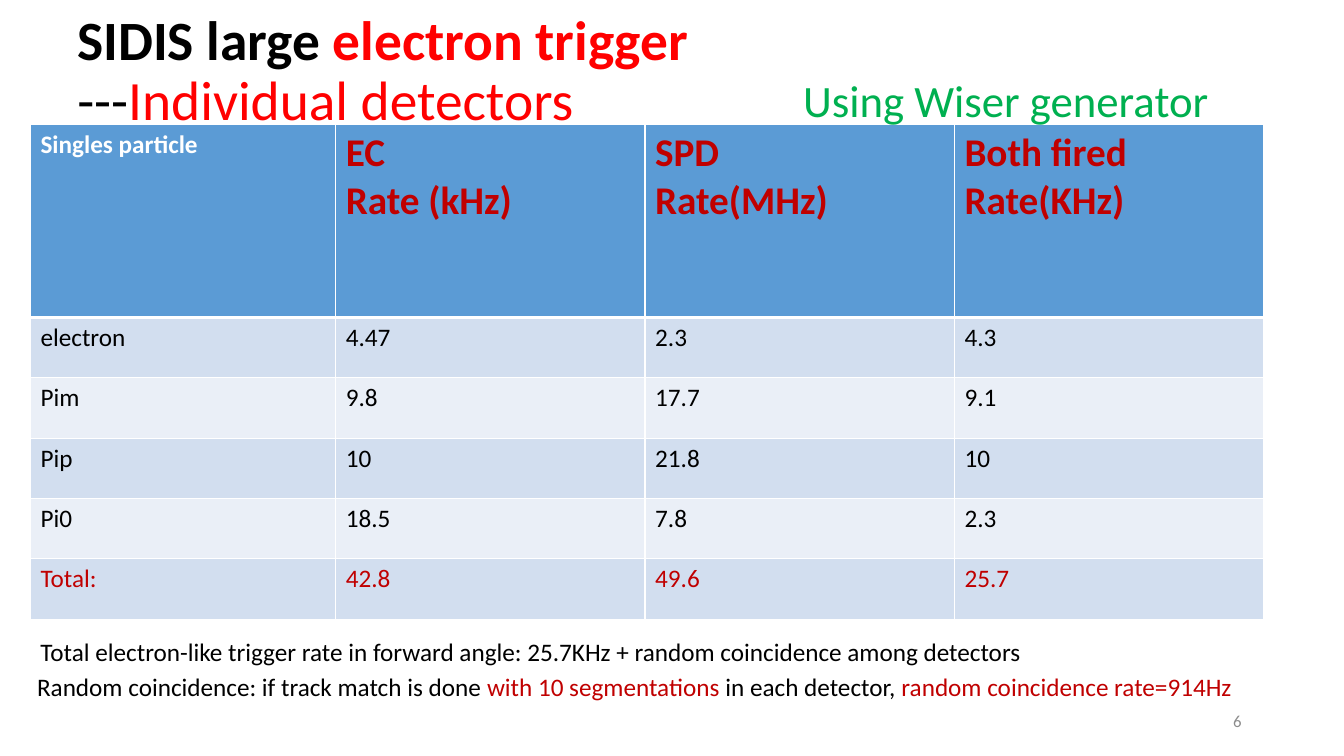
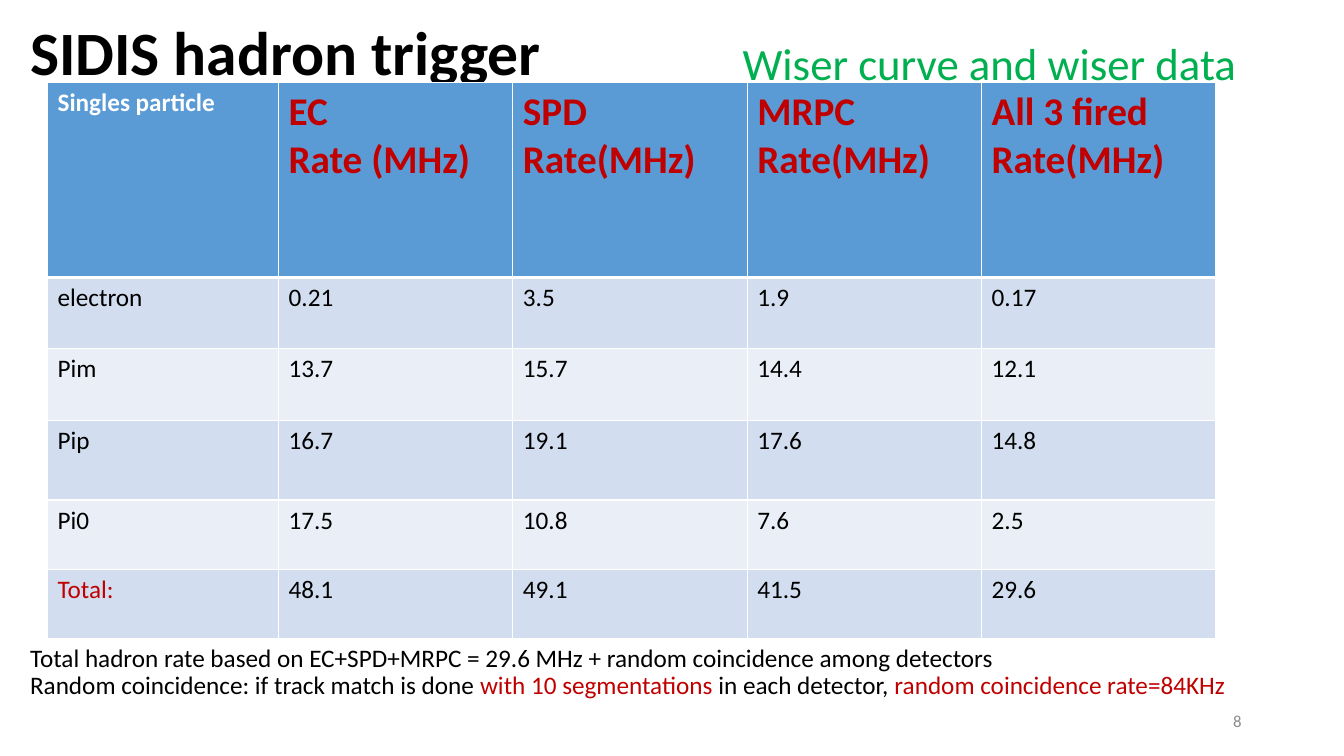
from dataclasses import dataclass

from lxml import etree
from pptx import Presentation
from pptx.dml.color import RGBColor
from pptx.enum import text as t
from pptx.oxml.ns import qn
from pptx.util import Pt

FONT = "Calibri"
HEX = {
    "black": "000000", "white": "FFFFFF", "red": "FF0000", "dark": "C00000",
    "green": "00B050", "gray": "8C8C8C",
    "head": "5B9BD5", "odd": "D2DEEF", "even": "EAEFF7",
}
BODY, HEAD, TAG, FOOT = 18, 28, 32, 12


@dataclass(frozen=True)
class Piece:
    """A run of text; a final newline breaks the line after it."""
    text: str
    color: str = "black"
    bold: bool = False


@dataclass(frozen=True)
class Box:
    left: float
    top: float
    width: float
    height: float


@dataclass(frozen=True)
class Label:
    box: Box
    pieces: tuple[Piece, ...]
    size: float = BODY
    wrap: bool = False


@dataclass(frozen=True)
class Grid:
    left: float
    top: float
    first: float
    other: float
    heights: tuple[float, ...]
    heads: tuple[str, ...]
    rows: tuple[tuple[str, ...], ...]
    total: str


@dataclass(frozen=True)
class Page:
    number: str
    title: Label
    grid: Grid
    labels: tuple[Label, ...]


def color(name: str) -> RGBColor:
    return RGBColor.from_string(HEX[name])


def style(run, size: float, tone: str, bold: bool = False) -> None:
    font = run.font
    font.name, font.size, font.bold = FONT, Pt(size), bold
    font.color.rgb = color(tone)


def write(para, pieces: tuple[Piece, ...], size: float) -> None:
    for piece in pieces:
        run = para.add_run()
        run.text = piece.text.rstrip("\n")
        style(run, size, piece.color, piece.bold)
        if piece.text.endswith("\n"):
            para.add_line_break()
            etree.SubElement(para._p[-1], qn("a:rPr"), sz=str(round(size * 100)))


def place(shape, box: Box) -> None:
    shape.left, shape.top = Pt(box.left), Pt(box.top)
    shape.width, shape.height = Pt(box.width), Pt(box.height)


def add_title(slide, label: Label) -> None:
    shape = slide.shapes.title
    place(shape, label.box)
    frame = shape.text_frame
    frame.auto_size = t.MSO_AUTO_SIZE.NONE
    frame.vertical_anchor = t.MSO_ANCHOR.MIDDLE
    para = frame.paragraphs[0]
    para.alignment = t.PP_ALIGN.LEFT
    para.line_spacing = 0.9
    write(para, label.pieces, label.size)


def add_label(slide, label: Label):
    box = label.box
    shape = slide.shapes.add_textbox(
        Pt(box.left), Pt(box.top), Pt(box.width), Pt(box.height))
    frame = shape.text_frame
    frame.word_wrap = label.wrap
    frame.auto_size = t.MSO_AUTO_SIZE.SHAPE_TO_FIT_TEXT
    write(frame.paragraphs[0], label.pieces, label.size)
    return frame


def add_number(slide, number: str) -> None:
    frame = add_label(slide, Label(
        Box(678, 500.5, 216, 28.8), (Piece(number, "gray"),), FOOT, True))
    frame.auto_size = t.MSO_AUTO_SIZE.NONE
    frame.vertical_anchor = t.MSO_ANCHOR.MIDDLE
    frame.paragraphs[0].alignment = t.PP_ALIGN.RIGHT


def edge(cell, top: float, bottom: float) -> None:
    """Give the cell white borders; the sides are one point wide."""
    props = cell._tc.get_or_add_tcPr()
    for tag, width in (("lnL", 1), ("lnR", 1), ("lnT", top), ("lnB", bottom)):
        line = etree.SubElement(props, qn(f"a:{tag}"), w=str(Pt(width)))
        fill = etree.SubElement(line, qn("a:solidFill"))
        etree.SubElement(fill, qn("a:srgbClr"), val=HEX["white"])


def add_grid(slide, grid: Grid) -> None:
    rows = (("Singles particle", *grid.heads), *grid.rows)
    widths = [grid.first] + [grid.other] * len(grid.heads)
    table = slide.shapes.add_table(
        len(rows), len(widths), Pt(grid.left), Pt(grid.top),
        Pt(sum(widths)), Pt(sum(grid.heights))).table
    for col, width in zip(table.columns, widths):
        col.width = Pt(width)
    for row, height in zip(table.rows, grid.heights):
        row.height = Pt(height)
    last = len(rows) - 1
    for r, row in enumerate(rows):
        for c, text in enumerate(row):
            cell = table.cell(r, c)
            edge(cell, 3 if r == 1 else 1, 3 if r == 0 else 1)
            cell.fill.solid()
            band = "head" if r == 0 else "odd" if r % 2 else "even"
            cell.fill.fore_color.rgb = color(band)
            size, tone = BODY, "black"
            if r == 0:
                size, tone = (HEAD, "dark") if c else (BODY, "white")
            elif r == last:
                tone = grid.total if c else "dark"
            cell.text_frame.text = text
            for para in cell.text_frame.paragraphs:
                style(para.runs[0], size, tone, r == 0)


def chance(rate: str) -> tuple[Piece, ...]:
    return (
        Piece("Random coincidence: if track match is done "),
        Piece("with 10 segmentations ", "dark"),
        Piece("in each detector, "),
        Piece(f"random coincidence rate={rate}", "dark"),
    )


PAGES = (
    Page(
        "6",
        Label(Box(48, 10, 828, 83.5), (
            Piece("SIDIS large ", bold=True),
            Piece("electron trigger\n", "red", True),
            Piece("---"),
            Piece("Individual detectors", "red"),
        ), 39.6),
        Grid(
            21.8, 88.8, 218, 221, (138, *[43.1] * 5),
            ("EC\nRate (kHz)", "SPD\nRate(MHz)", "Both fired\nRate(KHz)"),
            (
                ("electron", "4.47", "2.3", "4.3"),
                ("Pim", "9.8", "17.7", "9.1"),
                ("Pip", "10", "21.8", "10"),
                ("Pi0", "18.5", "7.8", "2.3"),
                ("Total:", "42.8", "49.6", "25.7"),
            ),
            "dark",
        ),
        (
            Label(Box(566.6, 48.2, 348, 46),
                  (Piece("Using Wiser generator", "green"),), TAG, True),
            Label(Box(21.8, 451, 723.6, 29), (Piece(
                "Total electron-like trigger rate in forward angle: "
                "25.7KHz + random coincidence among detectors"),)),
            Label(Box(19.4, 476, 882.7, 29), chance("914Hz")),
        ),
    ),
    Page(
        "8",
        Label(Box(14.4, 2, 828, 75),
              (Piece("SIDIS hadron trigger", bold=True),), 44),
        Grid(
            34, 59.2, 165, 167.4, (139, 51, 51, 57, 49.5, 49.5),
            ("EC\nRate (MHz)", "SPD\nRate(MHz)", "MRPC\nRate(MHz)",
             "All 3 fired\nRate(MHz)"),
            (
                ("electron", "0.21", "3.5", "1.9", "0.17"),
                ("Pim", "13.7", "15.7", "14.4", "12.1"),
                ("Pip", "16.7", "19.1", "17.6", "14.8"),
                ("Pi0", "17.5", "10.8", "7.6", "2.5"),
                ("Total:", "48.1", "49.1", "41.5", "29.6"),
            ),
            "black",
        ),
        (
            Label(Box(14.4, 455, 715, 29), (Piece(
                "Total hadron rate based on EC+SPD+MRPC = 29.6 MHz "
                "+ random coincidence among detectors"),)),
            Label(Box(523.4, 21.6, 370.8, 46),
                  (Piece("Wiser curve and wiser data", "green"),), TAG),
            Label(Box(14.4, 474.5, 882.7, 29), chance("84KHz")),
        ),
    ),
)


def main() -> None:
    deck = Presentation()
    deck.slide_width, deck.slide_height = Pt(960), Pt(540)
    layout = deck.slide_layouts.get_by_name("Title Only")
    for page in PAGES:
        slide = deck.slides.add_slide(layout)
        add_title(slide, page.title)
        add_grid(slide, page.grid)
        for label in page.labels:
            add_label(slide, label)
        add_number(slide, page.number)
    deck.save("out.pptx")


if __name__ == "__main__":
    main()
